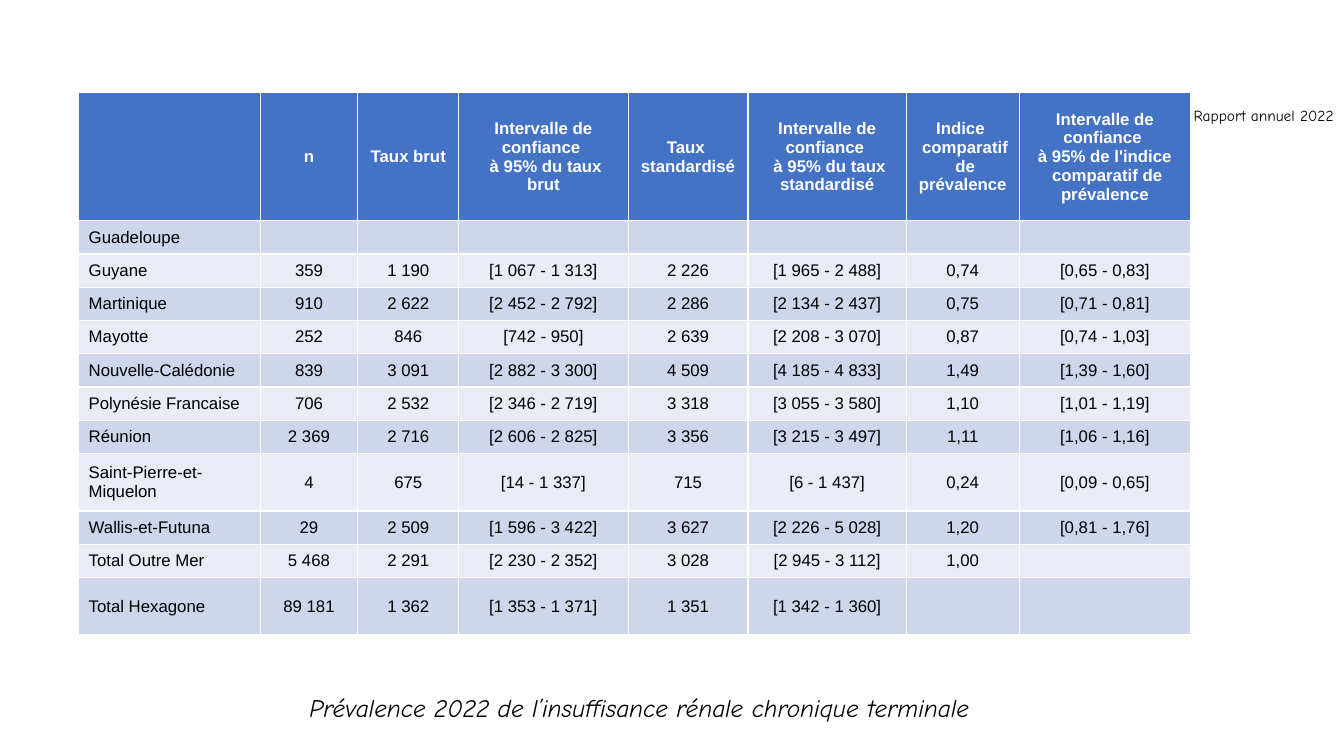
"""Build the slide on the 2022 prevalence of end-stage kidney disease overseas."""
from lxml.etree import SubElement
from pptx import Presentation
from pptx.dml.color import RGBColor
from pptx.enum.text import MSO_ANCHOR as Anchor, MSO_AUTO_SIZE as Auto, PP_ALIGN as Align
from pptx.oxml.ns import qn
from pptx.util import Inches, Pt

BLACK = RGBColor(0x00, 0x00, 0x00)
WHITE = RGBColor(0xFF, 0xFF, 0xFF)
BLUE = RGBColor(0x44, 0x72, 0xC4)
BANDS = RGBColor(0xE9, 0xEB, 0xF5), RGBColor(0xCF, 0xD5, 0xEA)

HEADS = [
    "",
    "n",
    "Taux brut",
    "Intervalle de confiance \n à 95% du taux brut",
    "Taux \nstandardisé",
    "Intervalle de confiance \n à 95% du taux standardisé",
    "Indice \n comparatif \n de prévalence",
    "Intervalle de confiance \n à 95% de l'indice \n comparatif de prévalence",
]
RATES = """\
Guadeloupe|||||||
Guyane|359|1 190|[1 067 - 1 313]|2 226|[1 965 - 2 488]|0,74|[0,65 - 0,83]
Martinique|910|2 622|[2 452 - 2 792]|2 286|[2 134 - 2 437]|0,75|[0,71 - 0,81]
Mayotte|252|846|[742 - 950]|2 639|[2 208 - 3 070]|0,87|[0,74 - 1,03]
Nouvelle-Calédonie|839|3 091|[2 882 - 3 300]|4 509|[4 185 - 4 833]|1,49|[1,39 - 1,60]
Polynésie Francaise|706|2 532|[2 346 - 2 719]|3 318|[3 055 - 3 580]|1,10|[1,01 - 1,19]
Réunion|2 369|2 716|[2 606 - 2 825]|3 356|[3 215 - 3 497]|1,11|[1,06 - 1,16]
Saint-Pierre-et-Miquelon|4|675|[14 - 1 337]|715|[6 - 1 437]|0,24|[0,09 - 0,65]
Wallis-et-Futuna|29|2 509|[1 596 - 3 422]|3 627|[2 226 - 5 028]|1,20|[0,81 - 1,76]
Total Outre Mer|5 468|2 291|[2 230 - 2 352]|3 028|[2 945 - 3 112]|1,00|
Total Hexagone|89 181|1 362|[1 353 - 1 371]|1 351|[1 342 - 1 360]||"""
ROWS = [HEADS] + [line.split("|") for line in RATES.splitlines()]
WIDTHS = [1.8, 0.97, 1, 1.68, 1.19, 1.57, 1.12, 1.7]
HEIGHTS = [1.27] + [0.33] * 7 + [0.57] + [0.33] * 2 + [0.57]


class Page:
    def __init__(self, slide):
        self.slide = slide
        self.body = "Arial"
        self.hand = "Comic Neue"
        self.size = 12

    def label(self, text, left, top, width, height, size, wrap=True, italic=False):
        box = self.slide.shapes.add_textbox(*map(Inches, (left, top, width, height)))
        frame = box.text_frame
        frame.word_wrap = wrap
        frame.auto_size = Auto.SHAPE_TO_FIT_TEXT
        frame.text = text
        font = frame.paragraphs[0].font
        font.name, font.size, font.italic = self.hand, Pt(size), italic
        font.color.rgb = BLACK

    def cell(self, cell, text, fill, color, bold, align):
        cell.fill.solid()
        cell.fill.fore_color.rgb = fill
        cell.vertical_anchor = Anchor.MIDDLE
        cell.text = text
        for par in cell.text_frame.paragraphs:
            par.alignment = align
            font = par.font
            font.name, font.size, font.bold = self.body, Pt(self.size), bold
            font.color.rgb = color
            if not text:
                SubElement(par._p, qn("a:endParaRPr"), sz=str(self.size * 100))

    def table(self, rows, left, top, widths, heights):
        frame = self.slide.shapes.add_table(
            len(rows), len(widths), Inches(left), Inches(top),
            Inches(sum(widths)), Inches(sum(heights)))
        table = frame.table
        for col, width in zip(table.columns, widths):
            col.width = Inches(width)
        for row, height in zip(table.rows, heights):
            row.height = Inches(height)
        for i, row in enumerate(rows):
            head = i == 0
            fill, color = (BLUE, WHITE) if head else (BANDS[i % 2], BLACK)
            for j, text in enumerate(row):
                align = Align.CENTER if head or j else Align.LEFT
                self.cell(table.cell(i, j), text, fill, color, head, align)


def main():
    deck = Presentation()
    deck.slide_width, deck.slide_height = Inches(13.33), Inches(7.5)
    page = Page(deck.slides.add_slide(deck.slide_layouts[6]))
    page.label("Rapport annuel 2022", 11.74, 1, 1.69, 0.29, 11, wrap=False)
    page.table(ROWS, 0.78, 0.92, WIDTHS, HEIGHTS)
    page.label("Prévalence 2022 de l’insuffisance rénale chronique terminale",
               2.97, 6.82, 8.04, 0.4, 18, italic=True)
    deck.save("out.pptx")


if __name__ == "__main__":
    main()
